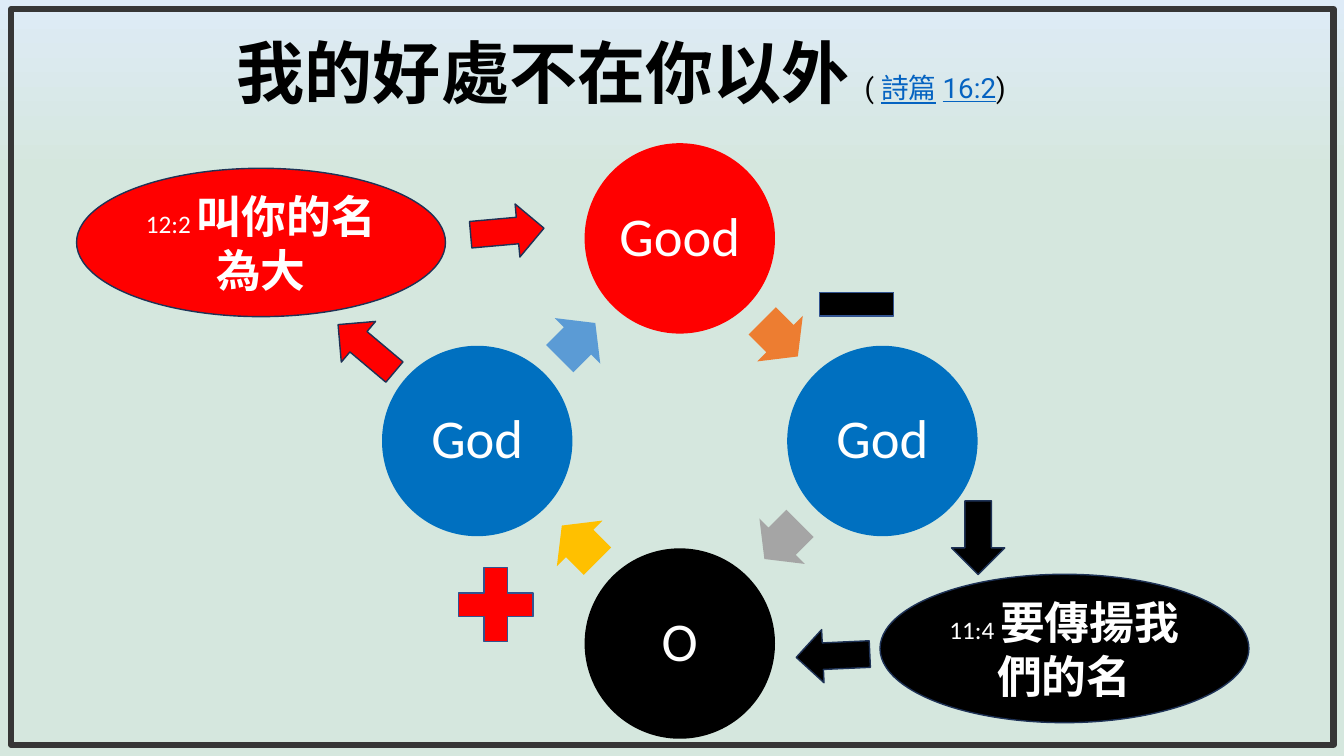
"""Build a slide showing a cycle of four circles with two verse callouts."""
import math

import pptx
import pptx.dml.color
import pptx.enum.shapes
import pptx.enum.text
import pptx.oxml
import pptx.oxml.ns
import pptx.util

Pt = pptx.util.Pt
SHAPE = pptx.enum.shapes.MSO_SHAPE
ALIGN = pptx.enum.text.PP_ALIGN
MIDDLE = pptx.enum.text.MSO_ANCHOR.MIDDLE
CJK = "Noto Sans CJK SC"
COLOURS = {
    "sky": "DEEBF7", "mint": "D5E7DE", "black": "000000", "white": "FFFFFF",
    "red": "FF0000", "blue": "0070C0", "link": "0563C1", "orange": "ED7D31",
    "grey": "A5A5A5", "gold": "FFC000", "light blue": "5B9BD5",
    "sign edge": "325491", "edge": "1E3256", "frame": "363636",
}


def rgb(name):
    return pptx.dml.color.RGBColor.from_string(COLOURS[name])


def add_span(para, text, size=18, font="Calibri", colour="white", bold=False, underline=False):
    span = para.add_run()
    span.text = text
    span.font.size = Pt(size)
    span.font.bold = bold
    span.font.underline = underline
    span.font.color.rgb = rgb(colour)
    span.font.name = font
    east_asian = pptx.oxml.parse_xml(f'<a:ea {pptx.oxml.ns.nsdecls("a")} typeface="{CJK}"/>')
    span.font._element.append(east_asian)


deck = pptx.Presentation()
deck.slide_width, deck.slide_height = Pt(960), Pt(540)
page = deck.slides.add_slide(deck.slide_layouts[5])

backdrop = page.background.fill
backdrop.gradient()
backdrop.gradient_angle = 270
for stop, (colour, position) in zip(backdrop.gradient_stops, [("sky", 0), ("mint", 0.23)]):
    stop.color.rgb = rgb(colour)
    stop.position = position

title = page.shapes.title
title.left, title.top, title.width, title.height = Pt(162), Pt(24), Pt(648), Pt(90)
frame = title.text_frame
frame.word_wrap = True
frame.auto_size = pptx.enum.text.MSO_AUTO_SIZE.NONE
frame.vertical_anchor = MIDDLE
frame.margin_bottom = Pt(32)
para = frame.paragraphs[0]
para.alignment = ALIGN.LEFT
para.line_spacing = 0.9
add_span(para, "我的好處不在你以外 ", size=48.6, font="Roboto", colour="black", bold=True)
for text, linked in [("( ", False), ("詩篇", True), (" ", False), ("16:2", True), (")", False)]:
    add_span(para, text, size=19.8, font="Roboto",
             colour="link" if linked else "black", underline=linked)

CENTRE_X, CENTRE_Y = 485.6, 315
CIRCLE, CIRCLE_ORBIT = 136, 144.7
ARROW_WIDTH, ARROW_HEIGHT, ARROW_ORBIT = 36, 46, 102.3
cycle = [("Good", "red", "orange"), ("God", "blue", "grey"),
         ("O", "black", "gold"), ("God", "blue", "light blue")]
for step, (word, circle_colour, arrow_colour) in enumerate(cycle):
    angle = math.radians(90 * step - 90)
    circle = page.shapes.add_shape(
        SHAPE.OVAL,
        Pt(CENTRE_X + CIRCLE_ORBIT * math.cos(angle) - CIRCLE / 2),
        Pt(CENTRE_Y + CIRCLE_ORBIT * math.sin(angle) - CIRCLE / 2),
        Pt(CIRCLE), Pt(CIRCLE))
    angle += math.radians(44.4)
    arrow = page.shapes.add_shape(
        SHAPE.RIGHT_ARROW,
        Pt(CENTRE_X + ARROW_ORBIT * math.cos(angle) - ARROW_WIDTH / 2),
        Pt(CENTRE_Y + ARROW_ORBIT * math.sin(angle) - ARROW_HEIGHT / 2),
        Pt(ARROW_WIDTH), Pt(ARROW_HEIGHT))
    arrow.rotation = 45 + 90 * step
    arrow.adjustments[0] = 0.6
    for shape, colour in [(circle, circle_colour), (arrow, arrow_colour)]:
        shape.shadow.inherit = False
        shape.fill.solid()
        shape.fill.fore_color.rgb = rgb(colour)
        shape.line.fill.background()
    frame = circle.text_frame
    frame.margin_left = frame.margin_right = frame.margin_top = frame.margin_bottom = Pt(3.6)
    frame.vertical_anchor = MIDDLE
    para = frame.paragraphs[0]
    para.alignment = ALIGN.CENTER
    para.line_spacing = 0.9
    add_span(para, word, size=39)

border = page.shapes.add_shape(SHAPE.RECTANGLE, Pt(8), Pt(6.5), Pt(944.5), Pt(525.5))
border.shadow.inherit = False
border.fill.background()
border.line.color.rgb = rgb("frame")
border.line.width = Pt(4.5)

SIGN, CALLOUT, POINTER = (72, 72), (263.5, 106), (38, 52.6)
outlined = [
    (SHAPE.MATH_MINUS, 576, 181.4, SIGN, 0, "black", "sign edge", None),
    (SHAPE.MATH_PLUS, 318.2, 396, SIGN, 0, "red", "sign edge", None),
    (SHAPE.OVAL, 628.6, 410.2, CALLOUT, 0, "black", "edge", ("11:4 ", "要傳揚我們的名")),
    (SHAPE.OVAL, 54.7, 120.2, CALLOUT, 0, "red", "edge", ("12:2 ", "叫你的名為大")),
    (SHAPE.DOWN_ARROW, 679.7, 357.8, POINTER, 0, "black", "edge", None),
    (SHAPE.DOWN_ARROW, 576, 442.1, POINTER, 87.4, "black", "edge", None),
    (SHAPE.DOWN_ARROW, 343.4, 139, POINTER, 264.9, "red", "edge", None),
    (SHAPE.DOWN_ARROW, 242.6, 222.5, POINTER, 130.1, "red", "edge", None),
]
for kind, left, top, (width, height), turn, colour, edge, verse in outlined:
    shape = page.shapes.add_shape(kind, Pt(left), Pt(top), Pt(width), Pt(height))
    shape.rotation = turn
    shape.shadow.inherit = False
    shape.fill.solid()
    shape.fill.fore_color.rgb = rgb(colour)
    shape.line.color.rgb = rgb(edge)
    shape.line.width = Pt(1)
    if verse:
        shape.text_frame.word_wrap = True
        shape.text_frame.vertical_anchor = MIDDLE
        para = shape.text_frame.paragraphs[0]
        para.alignment = ALIGN.CENTER
        add_span(para, verse[0])
        add_span(para, verse[1], size=32, font=CJK, bold=True)

deck.save("out.pptx")
